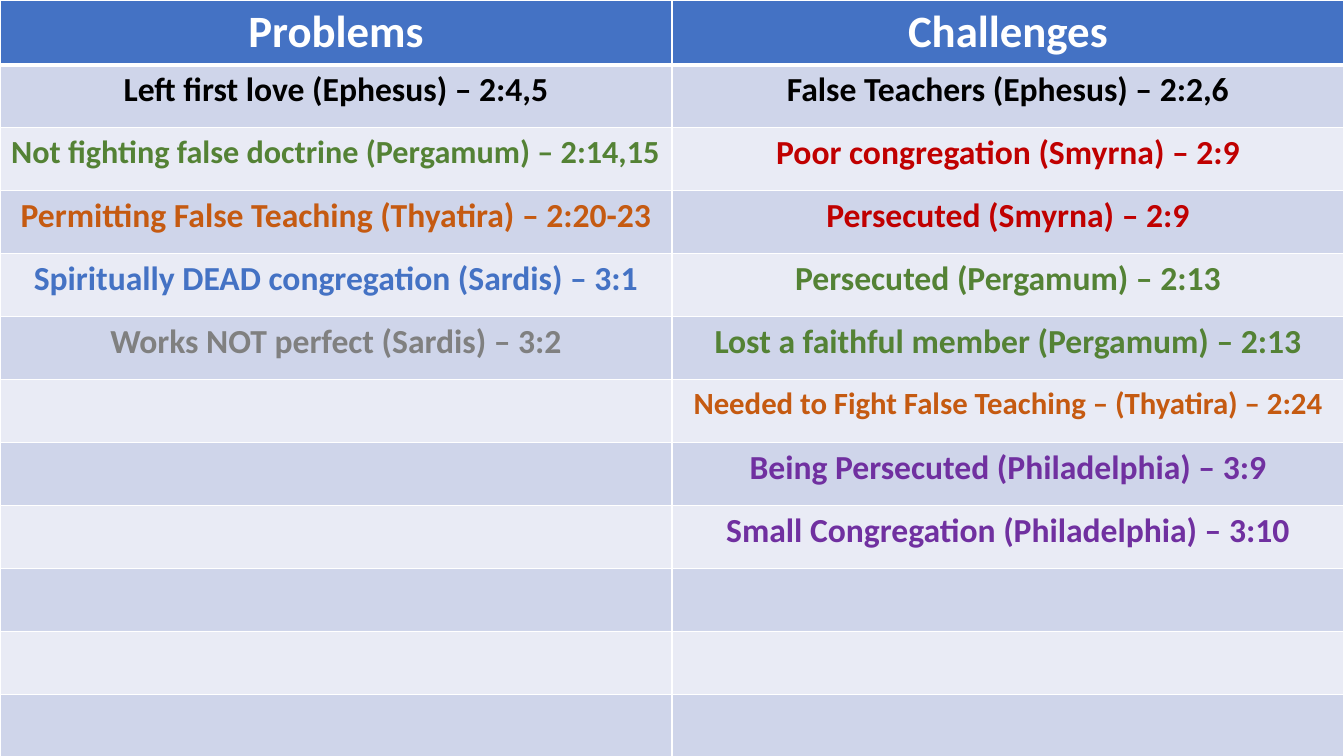
import pptx
import pptx.dml.color
import pptx.enum.text
import pptx.oxml
import pptx.oxml.ns
import pptx.util

COLORS = {
    "white": "FFFFFF",
    "black": "000000",
    "blue": "4472C4",
    "green": "548235",
    "orange": "C55A11",
    "red": "C00000",
    "gray": "808080",
    "purple": "7030A0",
    "band_dark": "CFD5EA",
    "band_light": "E9EBF5",
}

HEADINGS = ["Problems", "Challenges"]
PROBLEMS = [
    ("Left first love (Ephesus) – 2:4,5", "black", 24),
    ("Not fighting false doctrine (Pergamum) – 2:14,15", "green", 23),
    ("Permitting False Teaching (Thyatira) – 2:20-23", "orange", 24),
    ("Spiritually DEAD congregation (Sardis) – 3:1", "blue", 24),
    ("Works NOT perfect (Sardis) – 3:2", "gray", 24),
]
CHALLENGES = [
    ("False Teachers (Ephesus) – 2:2,6", "black", 24),
    ("Poor congregation (Smyrna) – 2:9", "red", 24),
    ("Persecuted (Smyrna) – 2:9", "red", 24),
    ("Persecuted (Pergamum) – 2:13", "green", 24),
    ("Lost a faithful member (Pergamum) – 2:13", "green", 24),
    ("Needed to Fight False Teaching – (Thyatira) – 2:24", "orange", 22),
    ("Being Persecuted (Philadelphia) – 3:9", "purple", 24),
    ("Small Congregation (Philadelphia) – 3:10", "purple", 24),
]
ROW_COUNT = 12


def rgb(name):
    return pptx.dml.color.RGBColor.from_string(COLORS[name])


def write_text(text_frame, text, *, size, color, font="Calibri", bold=True):
    paragraph = text_frame.paragraphs[0]
    paragraph.alignment = pptx.enum.text.PP_ALIGN.CENTER
    run = paragraph.add_run()
    run.text = text
    run.font.name = font
    run.font.size = pptx.util.Pt(size)
    run.font.bold = bold
    run.font.color.rgb = rgb(color)


class SlideBuilder:
    def __init__(self, presentation):
        self.width = presentation.slide_width
        self.height = presentation.slide_height
        self.bands = ["band_dark", "band_light"]
        self.slide = presentation.slides.add_slide(presentation.slide_layouts[6])

    def border(self, cell, side, points, color="white"):
        line = pptx.oxml.parse_xml(
            f'<a:ln{side} {pptx.oxml.ns.nsdecls("a")} w="{pptx.util.Pt(points)}">'
            f'<a:solidFill><a:srgbClr val="{COLORS[color]}"/></a:solidFill>'
            f"</a:ln{side}>"
        )
        cell._tc.get_or_add_tcPr().append(line)

    def style_cell(self, cell, row):
        top = 3 if row == 1 else 1
        bottom = 3 if row == 0 else 1
        for side, points in zip("LRTB", (1, 1, top, bottom)):
            self.border(cell, side, points)
        cell.fill.solid()
        cell.fill.fore_color.rgb = rgb("blue" if row == 0 else self.bands[(row - 1) % 2])

    def table(self, headings, columns, row_count):
        shape = self.slide.shapes.add_table(
            row_count, len(headings), 0, 0, self.width, self.height
        )
        table = shape.table
        for row in range(row_count):
            for column in range(len(headings)):
                self.style_cell(table.cell(row, column), row)
        for column, (heading, entries) in enumerate(zip(headings, columns)):
            cells = [(heading, "white", 32), *entries]
            for row, (text, color, size) in enumerate(cells):
                write_text(table.cell(row, column).text_frame, text, size=size, color=color)


def main():
    presentation = pptx.Presentation()
    presentation.slide_width = pptx.util.Inches(13.33)
    presentation.slide_height = pptx.util.Inches(7.5)
    builder = SlideBuilder(presentation)
    builder.table(HEADINGS, [PROBLEMS, CHALLENGES], ROW_COUNT)
    presentation.save("out.pptx")


if __name__ == "__main__":
    main()
